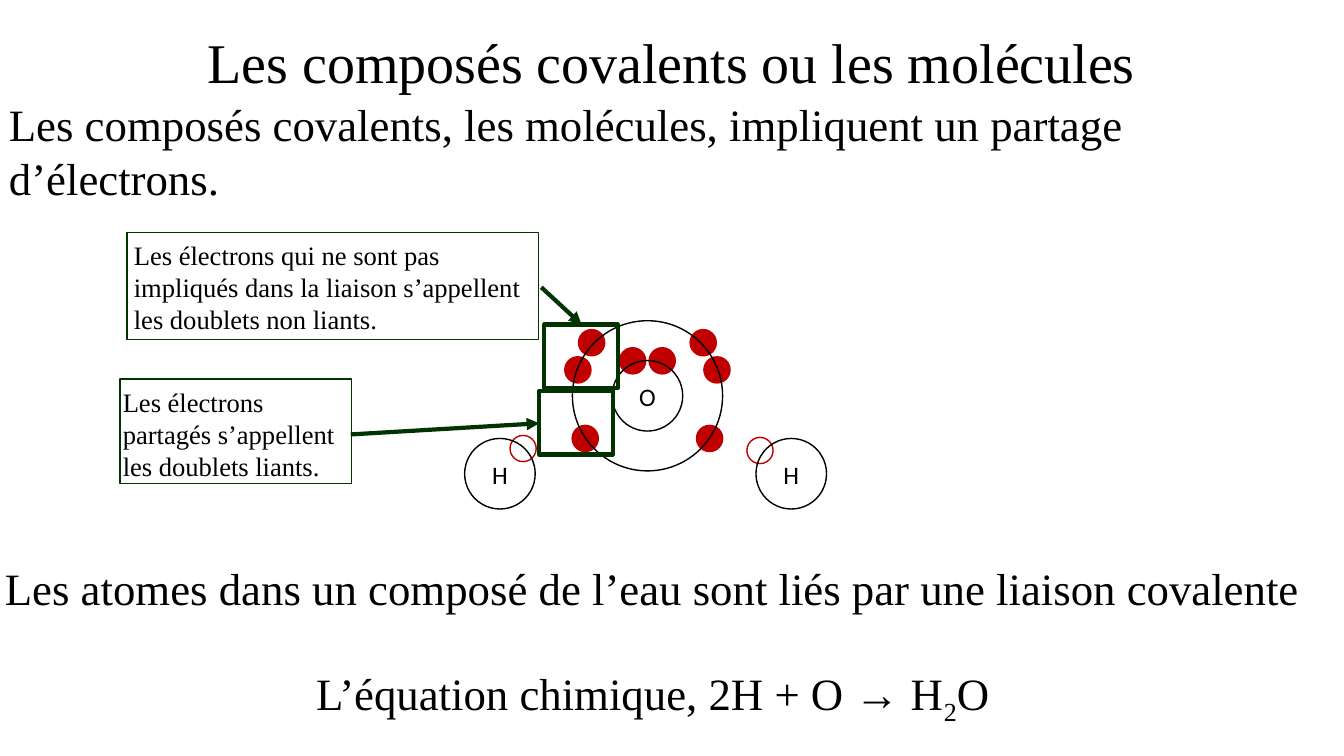
import pptx
import pptx.util
import pptx.dml.color
import pptx.enum.shapes
import pptx.enum.text
import pptx.oxml.ns
import lxml.etree

COLORS = {"ink": "000000", "paper": "FFFFFF", "electron": "C00000", "frame": "003300"}
SHAPES = pptx.enum.shapes.MSO_SHAPE
ALIGN = pptx.enum.text.PP_ALIGN
FIT = pptx.enum.text.MSO_AUTO_SIZE
SERIF, SANS = "Times New Roman", "Calibri"

deck = pptx.Presentation()
deck.slide_width = pptx.util.Inches(13.333)
deck.slide_height = pptx.util.Inches(7.5)
page = deck.slides.add_slide(deck.slide_layouts[5])
CELL = deck.slide_width / 40  # square grid: 40 columns by 22.5 rows


def add_outline(kind, col, row, wide, high, line, weight=1, fill=None):
    shape = page.shapes.add_shape(kind, *(round(n * CELL) for n in (col, row, wide, high)))
    shape.shadow.inherit = False
    if fill:
        shape.fill.solid()
        shape.fill.fore_color.rgb = pptx.dml.color.RGBColor.from_string(COLORS[fill])
    else:
        shape.fill.background()
    shape.line.color.rgb = pptx.dml.color.RGBColor.from_string(COLORS[line])
    shape.line.width = pptx.util.Pt(weight)


def add_text(text, col, row, wide, high, size, face=SERIF, wrap=True, align=ALIGN.LEFT):
    box = page.shapes.add_textbox(*(round(n * CELL) for n in (col, row, wide, high)))
    frame = box.text_frame
    frame.word_wrap = wrap
    frame.auto_size = FIT.SHAPE_TO_FIT_TEXT
    para = frame.paragraphs[0]
    para.text = text
    para.alignment = align
    para.font.size = pptx.util.Pt(size)
    para.font.name = face
    para.font.color.rgb = pptx.dml.color.RGBColor.from_string(COLORS["ink"])
    return frame


# Title and introduction
title = page.shapes.title
title.left, title.top, title.width, title.height = (
    round(n * CELL) for n in (2.73, 0.84, 34.5, 2.22))
title.text_frame.text = "Les composés covalents ou les molécules"
title.text_frame.auto_size = FIT.NONE
title.text_frame.vertical_anchor = pptx.enum.text.MSO_ANCHOR.MIDDLE
para = title.text_frame.paragraphs[0]
para.alignment = ALIGN.CENTER
para.line_spacing = 0.9
para.font.size = pptx.util.Pt(40)
para.font.name = SERIF
para.font.color.rgb = pptx.dml.color.RGBColor.from_string(COLORS["ink"])
add_text("Les composés covalents, les molécules, impliquent un partage d’électrons.",
         -0.03, 2.73, 39.27, 3.54, 32)

# Frames behind the two explanations
add_outline(SHAPES.RECTANGLE, 3.57, 11.28, 6.9, 3.12, "frame", fill="paper")
add_outline(SHAPES.RECTANGLE, 3.78, 6.93, 12.24, 3.18, "frame", fill="paper")

# Electrons: the oxygen ones mirror each other about its axis
ELECTRON, ATOM, SHELL = 0.78, 2.1, 4.47
OXYGEN_X, OXYGEN_Y = 19.27, 11.78
electrons = [(15.57, 13.35, "paper"), (22.62, 13.41, "paper")]
for offset, middle in ((0.44, 10.74), (1.66, 10.2), (2.07, 11.01), (1.85, 13.05)):
    for side in (-1, 1):
        electrons.append((OXYGEN_X + side * offset, middle, "electron"))
for x, y, fill in electrons:
    add_outline(SHAPES.OVAL, x - ELECTRON / 2, y - ELECTRON / 2, ELECTRON, ELECTRON,
                "electron", fill=fill)

# Atoms and the outer shell of oxygen
for symbol, x, y in (("H", 14.88, 14.1), ("O", OXYGEN_X, OXYGEN_Y), ("H", 23.55, 14.1)):
    add_outline(SHAPES.OVAL, x - ATOM / 2, y - ATOM / 2, ATOM, ATOM, "ink")
    add_text(symbol, x - 0.54, y - 0.57, 1.08, 1.2, 18, SANS, False, ALIGN.CENTER)
add_outline(SHAPES.OVAL, OXYGEN_X - SHELL / 2, OXYGEN_Y - SHELL / 2, SHELL, SHELL, "ink")

# Conclusion and equation
conclusion = add_text(
    "Les atomes dans un composé de l’eau sont liés par une liaison covalente",
    -0.15, 16.53, 39.51, 5.16, 32, wrap=False)
equation = conclusion.add_paragraph()
equation.alignment = ALIGN.CENTER
equation.space_before = pptx.util.Pt(37)
for text, baseline in (("L’équation chimique, 2H + O → H", 0), ("2", -25000), ("O", 0)):
    span = equation.add_run()
    span.text = text
    if baseline:
        span.font._element.set("baseline", str(baseline))
equation.font.size = pptx.util.Pt(32)
equation.font.name = SERIF
equation.font.color.rgb = pptx.dml.color.RGBColor.from_string(COLORS["ink"])

# Marked electron pairs
for col, row in ((16.2, 9.66), (16.05, 11.64)):
    add_outline(SHAPES.RECTANGLE, col, row, 2.19, 1.89, "frame", weight=3)

# Explanations
add_text("Les électrons partagés s’appellent les doublets liants.",
         3.36, 11.34, 7.08, 3.18, 19)
add_text("Les électrons qui ne sont pas impliqués dans la liaison s’appellent "
         "les doublets non liants.", 3.69, 6.96, 12.42, 3.18, 19)

# Arrows from the explanations to the pairs
for ends in ((10.44, 12.93, 16.05, 12.6), (16.11, 8.55, 17.31, 9.66)):
    arrow = page.shapes.add_connector(pptx.enum.shapes.MSO_CONNECTOR.STRAIGHT,
                                      *(round(n * CELL) for n in ends))
    arrow.line.color.rgb = pptx.dml.color.RGBColor.from_string(COLORS["frame"])
    arrow.line.width = pptx.util.Pt(3)
    head = lxml.etree.SubElement(arrow.line._get_or_add_ln(), pptx.oxml.ns.qn("a:tailEnd"))
    head.set("type", "triangle")
    lxml.etree.SubElement(arrow._element.spPr, pptx.oxml.ns.qn("a:effectLst"))

deck.save("out.pptx")
